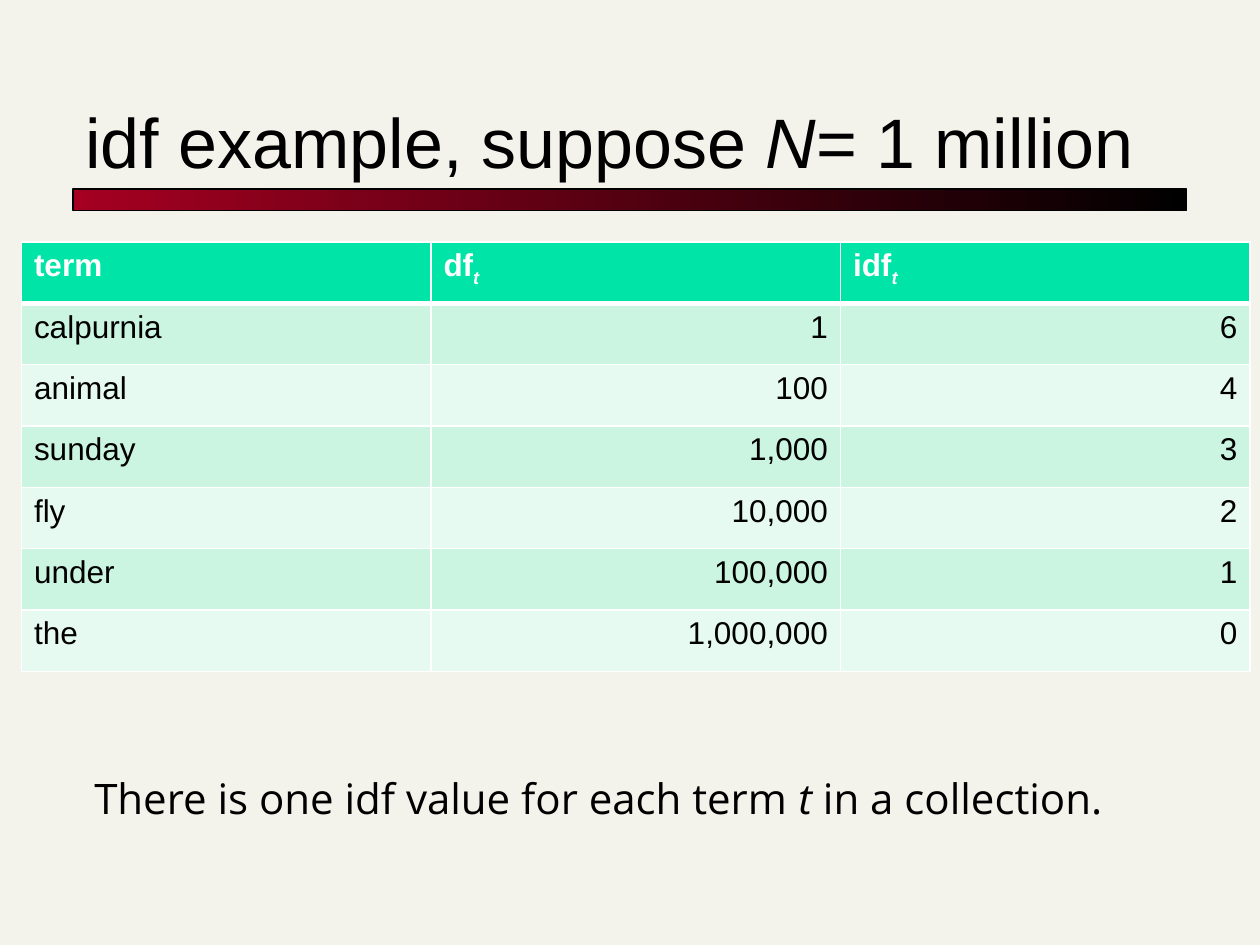
from pptx import Presentation
from pptx.dml.color import RGBColor as RGB
from pptx.enum.shapes import MSO_SHAPE as Shape
from pptx.enum.text import MSO_ANCHOR as Anchor, MSO_AUTO_SIZE as AutoSize, PP_ALIGN as Align
from pptx.oxml.ns import qn
from pptx.util import Inches, Pt
from lxml.etree import SubElement

COLORS = {
    "background": "F4F3EB", "text": "000000", "white": "FFFFFF",
    "bar_start": "A50021", "bar_end": "000000",
    "header": "00E4A8", "odd_row": "CBF5E1", "even_row": "E7FAF1",
}
HEADERS = [["term"], ["df", "t"], ["idf", "t"]]
TERMS = [
    ("calpurnia", "1", "6"),
    ("animal", "100", "4"),
    ("sunday", "1,000", "3"),
    ("fly", "10,000", "2"),
    ("under", "100,000", "1"),
    ("the", "1,000,000", "0"),
]


def color(name):
    return RGB.from_string(COLORS[name])


class Deck:
    def __init__(self, width, height):
        self.presentation = Presentation()
        self.presentation.slide_width = Inches(width)
        self.presentation.slide_height = Inches(height)
        self.slide = None

    def add_slide(self):
        self.slide = self.presentation.slides.add_slide(self.presentation.slide_layouts[6])
        self.slide.background.fill.solid()
        self.slide.background.fill.fore_color.rgb = color("background")

    def add_runs(self, paragraph, parts, size, font="Arial", ink="text", bold=False, subscript=False):
        """Add parts as runs; every second part is italic, and lowered if subscript."""
        for index, part in enumerate(parts):
            run = paragraph.add_run()
            run.text = part
            run.font.name, run.font.size = font, Pt(size)
            run.font.color.rgb = color(ink)
            run.font.bold = bold
            run.font.italic = index % 2 == 1
            if subscript and run.font.italic:
                run._r.get_or_add_rPr().set("baseline", "-25000")

    def text(self, box, parts, size, font, anchor=Anchor.TOP, wrap=True, auto_size=AutoSize.NONE):
        frame = self.slide.shapes.add_textbox(*map(Inches, box)).text_frame
        frame.word_wrap = wrap
        frame.auto_size = auto_size
        frame.vertical_anchor = anchor
        self.add_runs(frame.paragraphs[0], parts, size, font)

    def gradient_bar(self, box, start, end):
        bar = self.slide.shapes.add_shape(Shape.RECTANGLE, *map(Inches, box))
        bar.shadow.inherit = False
        bar.fill.gradient()
        bar.fill.gradient_angle = 0
        for stop, name in zip(bar.fill.gradient_stops, (start, end)):
            stop.color.rgb = color(name)
        bar.line.color.rgb = color("text")
        bar.line.width = Pt(0.75)

    def style_cell(self, cell, fill, top=1, bottom=1):
        """Fill a cell and give it white borders, with widths in points."""
        properties = cell._tc.get_or_add_tcPr()
        for side, width in (("L", 1), ("R", 1), ("T", top), ("B", bottom)):
            border = SubElement(properties, qn(f"a:ln{side}"), w=str(Pt(width)))
            SubElement(SubElement(border, qn("a:solidFill")), qn("a:srgbClr"), val=COLORS["white"])
        cell.fill.solid()
        cell.fill.fore_color.rgb = color(fill)

    def table(self, box, headers, rows):
        grid = self.slide.shapes.add_table(len(rows) + 1, len(headers), *map(Inches, box)).table
        for column, parts in enumerate(headers):
            cell = grid.cell(0, column)
            self.style_cell(cell, "header", bottom=3)
            self.add_runs(cell.text_frame.paragraphs[0], parts, 18, ink="white", bold=True, subscript=True)
        for row, values in enumerate(rows, start=1):
            for column, value in enumerate(values):
                cell = grid.cell(row, column)
                self.style_cell(cell, "odd_row" if row % 2 else "even_row", top=3 if row == 1 else 1)
                paragraph = cell.text_frame.paragraphs[0]
                paragraph.alignment = Align.RIGHT if column else Align.LEFT
                self.add_runs(paragraph, [value], 18)


def main():
    deck = Deck(10, 7.5)
    deck.add_slide()
    deck.gradient_bar((0.58, 1.5, 8.84, 0.17), "bar_start", "bar_end")
    deck.text((0.58, 0.42, 8.83, 1.08), ["idf example, suppose ", "N", "= 1 million"],
              40, "Arial", anchor=Anchor.BOTTOM)
    deck.table((0.17, 1.92, 9.75, 3.41), HEADERS, TERMS)
    deck.text((0.65, 6.08, 8.76, 0.51),
              ["There is one idf value for each term ", "t", " in a collection."],
              24, "Open Sans", wrap=False, auto_size=AutoSize.SHAPE_TO_FIT_TEXT)
    deck.presentation.save("out.pptx")


if __name__ == "__main__":
    main()
